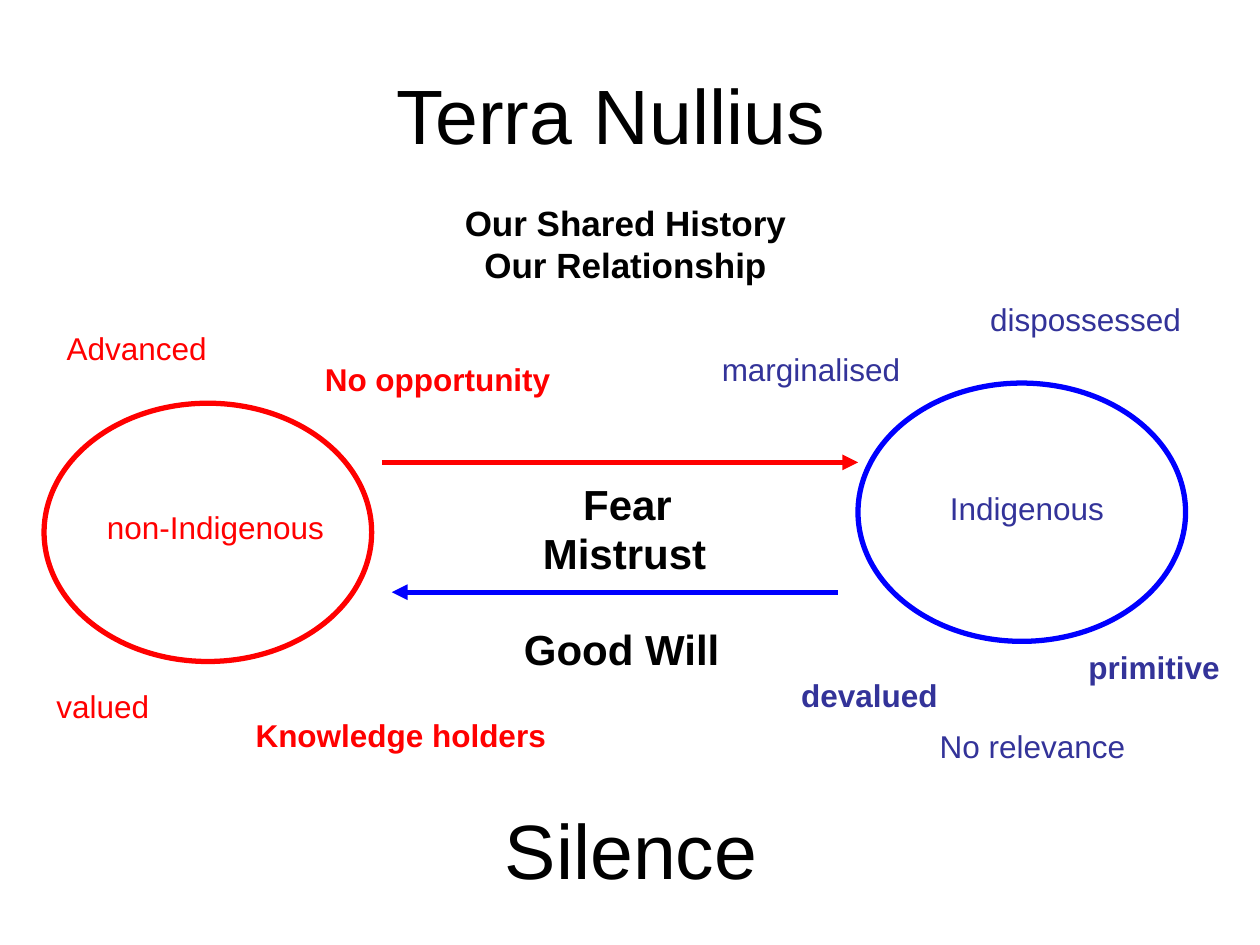
from dataclasses import dataclass

from lxml.etree import SubElement
from pptx import Presentation
from pptx.dml.color import RGBColor
from pptx.enum.shapes import MSO_CONNECTOR, MSO_SHAPE
from pptx.enum.text import MSO_ANCHOR, PP_ALIGN
from pptx.oxml.ns import qn
from pptx.util import Inches, Pt

RED, BLUE, INDIGO, BLACK = "FF0000", "0000FF", "333399", "000000"
FONT = "Arial"
LINE_WIDTH = Pt(3)


@dataclass
class Label:
    text: str
    left: float
    top: float
    width: float
    color: str = BLACK
    bold: bool = False
    size: int = 18
    height: float = 0.4
    align: PP_ALIGN = PP_ALIGN.LEFT
    anchor: MSO_ANCHOR = MSO_ANCHOR.TOP


@dataclass
class Group:
    left: float
    top: float
    color: str


@dataclass
class Arrow:
    start: float
    end: float
    y: float
    color: str


HEADING = Label("Terra Nullius", 0.35, 0.28, 9, size=44, height=1.25,
                align=PP_ALIGN.CENTER, anchor=MSO_ANCHOR.MIDDLE)

LABELS = [
    Label("Our Shared History Our Relationship", 3.43, 1.55, 3.07, bold=True,
          size=20, height=0.77, align=PP_ALIGN.CENTER),
    # Non-Indigenous side
    Label("non-Indigenous", 0.75, 3.98, 1.97, RED),
    Label("Advanced", 0.43, 2.56, 1.42, RED),
    Label("No opportunity", 2.48, 2.81, 2.2, RED, True),
    Label("valued", 0.35, 5.4, 1.34, RED),
    Label("Knowledge holders", 1.93, 5.63, 2.52, RED, True),
    # Indigenous side
    Label("Indigenous", 7.44, 3.83, 1.97, INDIGO),
    Label("marginalised", 5.63, 2.73, 1.81, INDIGO),
    Label("dispossessed", 7.76, 2.33, 1.81, INDIGO),
    Label("devalued", 6.26, 5.32, 1.34, INDIGO, True),
    Label("primitive", 8.54, 5.09, 1.34, INDIGO, True),
    Label("No relevance", 7.36, 5.72, 1.73, INDIGO),
    # Between the two groups
    Label("Fear", 4.53, 3.75, 1.18, BLACK, True, 24, 0.5),
    Label("Mistrust", 4.21, 4.14, 1.57, BLACK, True, 24, 0.5),
    Label("Good Will", 4.06, 4.9, 2.05, BLACK, True, 24, 0.5),
    Label("Silence", 0.51, 6.11, 9, size=44, height=1.25,
          align=PP_ALIGN.CENTER, anchor=MSO_ANCHOR.MIDDLE),
]
GROUPS = [Group(0.35, 3.2, RED), Group(6.81, 3.04, BLUE)]
ARROWS = [Arrow(3.03, 6.81, 3.67, RED), Arrow(6.65, 3.11, 4.7, BLUE)]


def rgb(color: str) -> RGBColor:
    return RGBColor.from_string(color)


def write_label(shape, label: Label) -> None:
    frame = shape.text_frame
    frame.word_wrap = True
    frame.vertical_anchor = label.anchor
    frame.text = label.text
    paragraph = frame.paragraphs[0]
    paragraph.alignment = label.align
    paragraph.font.name = FONT
    paragraph.font.size = Pt(label.size)
    paragraph.font.bold = label.bold
    paragraph.font.color.rgb = rgb(label.color)


def add_label(slide, label: Label) -> None:
    box = slide.shapes.add_textbox(Inches(label.left), Inches(label.top),
                                   Inches(label.width), Inches(label.height))
    write_label(box, label)


def add_title(slide, label: Label) -> None:
    title = slide.shapes.title
    title.left, title.top = Inches(label.left), Inches(label.top)
    title.width, title.height = Inches(label.width), Inches(label.height)
    write_label(title, label)


def add_group(slide, group: Group) -> None:
    ellipse = slide.shapes.add_shape(MSO_SHAPE.OVAL, Inches(group.left), Inches(group.top),
                                     Inches(2.6), Inches(2.05))
    ellipse.shadow.inherit = False
    ellipse.fill.background()
    ellipse.line.color.rgb = rgb(group.color)
    ellipse.line.width = LINE_WIDTH


def add_arrow(slide, arrow: Arrow) -> None:
    connector = slide.shapes.add_connector(MSO_CONNECTOR.STRAIGHT,
                                           Inches(arrow.start), Inches(arrow.y),
                                           Inches(arrow.end), Inches(arrow.y))
    connector.line.color.rgb = rgb(arrow.color)
    connector.line.width = LINE_WIDTH
    SubElement(connector.line._get_or_add_ln(), qn("a:tailEnd"), type="triangle")
    SubElement(connector._element.spPr, qn("a:effectLst"))


def main() -> None:
    prs = Presentation()
    prs.slide_width, prs.slide_height = Inches(10), Inches(7.5)
    slide = prs.slides.add_slide(prs.slide_layouts.get_by_name("Title Only"))

    add_title(slide, HEADING)
    for arrow in ARROWS:
        add_arrow(slide, arrow)
    for group in GROUPS:
        add_group(slide, group)
    for label in LABELS:
        add_label(slide, label)

    prs.save("out.pptx")


if __name__ == "__main__":
    main()
